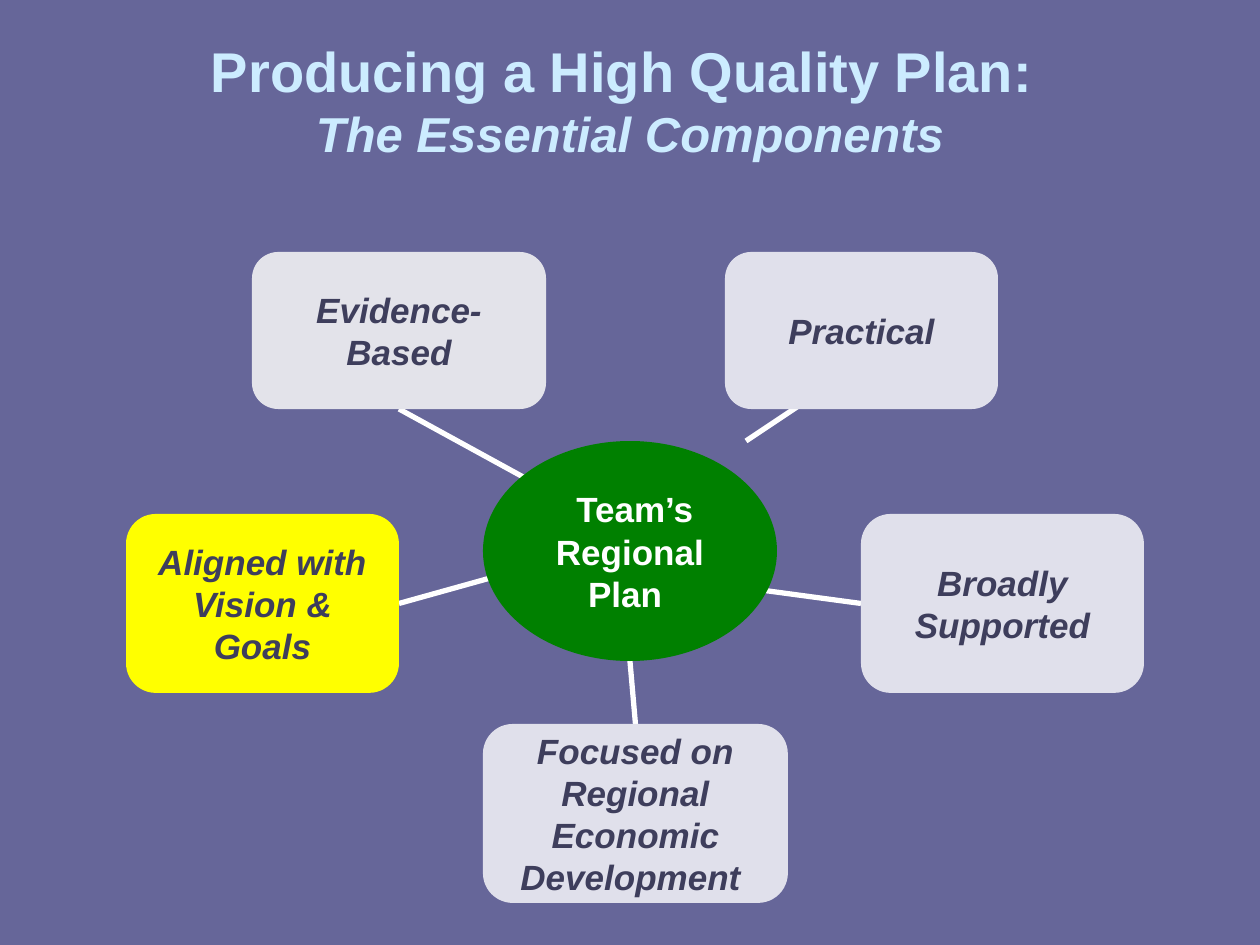
import pptx
import pptx.util
from pptx.dml.color import RGBColor
from pptx.enum.shapes import MSO_CONNECTOR, MSO_SHAPE
from pptx.enum.text import MSO_ANCHOR, PP_ALIGN
from pptx.oxml.ns import qn
import lxml.etree

PX = 914400 // 126
FONT = "Arial"
BACKGROUND = RGBColor(0x66, 0x66, 0x99)
TITLE = RGBColor(0xCC, 0xEC, 0xFF)
PALE = RGBColor(0xE3, 0xE3, 0xEA)
LAVENDER = RGBColor(0xE0, 0xE0, 0xEB)
YELLOW = RGBColor(0xFF, 0xFF, 0x00)
GREEN = RGBColor(0x00, 0x80, 0x00)
INK = RGBColor(0x3E, 0x3E, 0x5C)
WHITE = RGBColor(0xFF, 0xFF, 0xFF)

TOP, LEFT, BOTTOM, RIGHT = range(4)

# Text, box (left, top, width, height), fill,
# spoke start near the hub, spoke end: a side or a point
COMPONENTS = [
    ("Evidence-Based", (252, 252, 294, 157), PALE, (525, 478), BOTTOM),
    ("Focused on Regional Economic Development ", (483, 724, 305, 179),
     LAVENDER, (630, 661), TOP),
    ("Aligned with Vision & Goals", (126, 514, 273, 179), YELLOW,
     (494, 577), RIGHT),
    ("Broadly Supported", (861, 514, 283, 179), LAVENDER, (746, 588), LEFT),
    ("Practical", (725, 252, 273, 157), LAVENDER, (746, 441), (872, 357)),
]


def px(*values):
    return [pptx.util.Emu(v * PX) for v in values]


def style(font, size, color, bold=True, italic=False):
    font.name = FONT
    font.size = pptx.util.Pt(size)
    font.color.rgb = color
    font.bold = bold
    font.italic = italic


def add_title(slide):
    tf = slide.shapes.add_textbox(*px(105, 10, 1050, 179)).text_frame
    tf.word_wrap = True
    tf.vertical_anchor = MSO_ANCHOR.MIDDLE
    p = tf.paragraphs[0]
    p.alignment = PP_ALIGN.CENTER
    r = p.add_run()
    r.text = "Producing a High Quality Plan: "
    style(r.font, 32, TITLE)
    p.add_line_break()
    r = p.add_run()
    r.text = "The Essential Components"
    style(r.font, 28, TITLE, italic=True)


def add_node(slide, kind, box, fill, lines, color, italic):
    sp = slide.shapes.add_shape(kind, *px(*box))
    sp.shadow.inherit = False
    sp.fill.solid()
    sp.fill.fore_color.rgb = fill
    sp.line.fill.background()
    tf = sp.text_frame
    tf.word_wrap = True
    tf.vertical_anchor = MSO_ANCHOR.MIDDLE
    tf.text = "\n".join(lines)
    for p in tf.paragraphs:
        p.alignment = PP_ALIGN.CENTER
        style(p.font, 20, color, italic=italic)
    return sp


def add_spoke(slide, start, end, sp):
    joined = isinstance(end, int)
    x, y = start if joined else end
    line = slide.shapes.add_connector(
        MSO_CONNECTOR.STRAIGHT, *px(*start, x, y))
    if joined:
        line.end_connect(sp, end)
    line.line.color.rgb = WHITE
    line.line.width = pptx.util.Pt(3)
    lxml.etree.SubElement(line._element.spPr, qn("a:effectLst"))
    # Spokes lie behind the boxes, after the two group property elements
    slide.shapes._spTree.insert(2, line._element)


def main():
    prs = pptx.Presentation()
    prs.slide_width, prs.slide_height = px(1260, 945)
    slide = prs.slides.add_slide(prs.slide_layouts[6])
    slide.background.fill.solid()
    slide.background.fill.fore_color.rgb = BACKGROUND

    add_title(slide)

    # Components and their spokes
    for text, box, fill, start, end in COMPONENTS:
        sp = add_node(slide, MSO_SHAPE.ROUNDED_RECTANGLE, box, fill,
                      [text], INK, True)
        add_spoke(slide, start, end, sp)

    # Hub
    add_node(slide, MSO_SHAPE.OVAL, (483, 441, 294, 220), GREEN,
             [" Team’s", "Regional Plan "], WHITE, False)

    prs.save("out.pptx")


if __name__ == "__main__":
    main()
